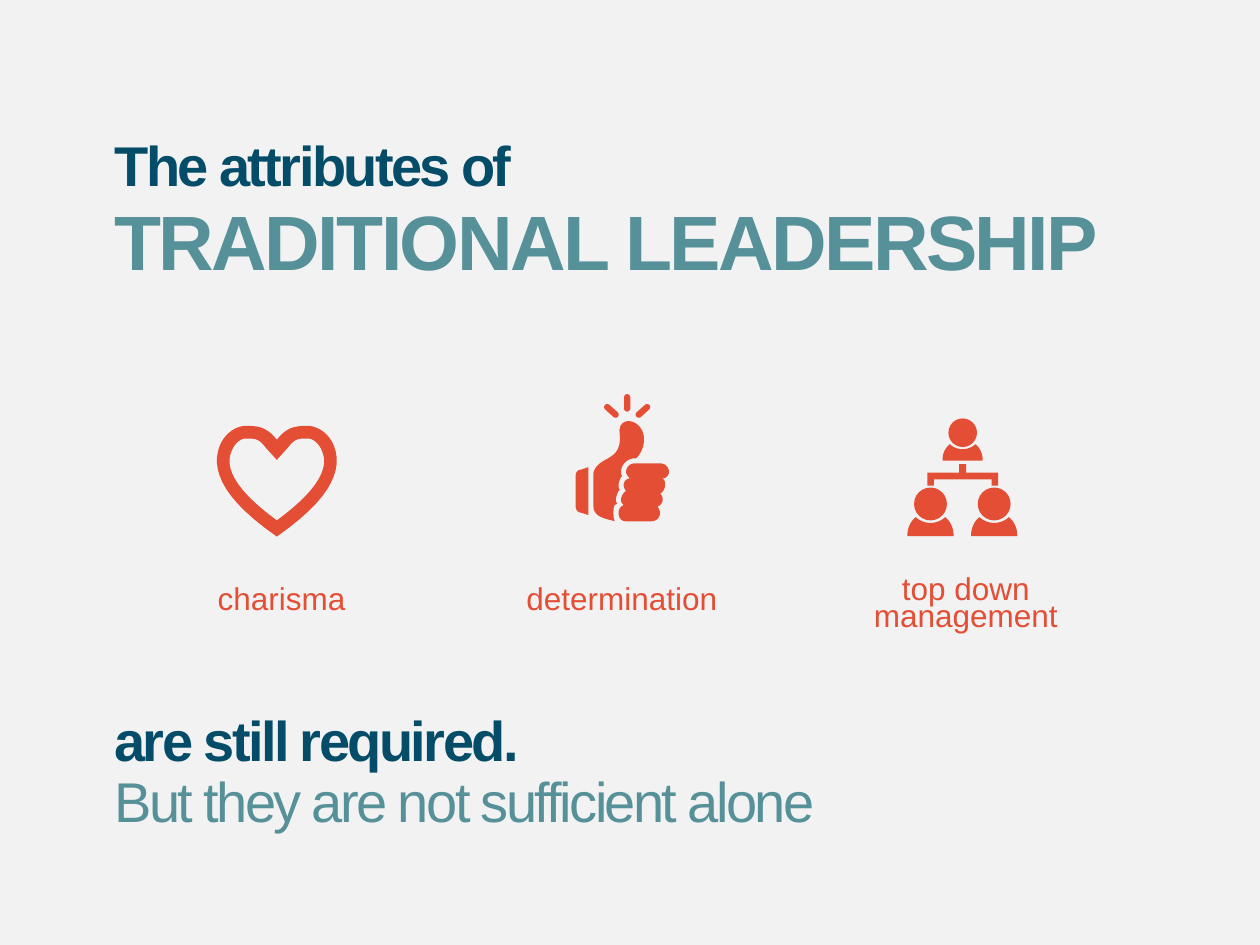
"""Build the slide on the attributes of traditional leadership."""
from pptx import Presentation
from pptx.dml.color import RGBColor
from pptx.enum.shapes import MSO_SHAPE
from pptx.enum.text import MSO_ANCHOR, MSO_AUTO_SIZE, PP_ALIGN
from pptx.util import Pt

OVAL = MSO_SHAPE.OVAL
ROUNDED = MSO_SHAPE.ROUNDED_RECTANGLE
LEFT, CENTER = PP_ALIGN.LEFT, PP_ALIGN.CENTER
TOP = MSO_ANCHOR.TOP
FIT_SHAPE, NO_FIT = MSO_AUTO_SIZE.SHAPE_TO_FIT_TEXT, MSO_AUTO_SIZE.NONE

COLORS = {"paper": "F2F2F2", "navy": "044C68", "teal": "569099", "red": "E34E35"}
CURVE_STEPS = 10
TITLE_ONLY_LAYOUT = 5

HEART_OUTER = [
    (0, 7.9), (4, 2.9, 7.9, 0, 15.8, 0), (18.7, 0), (25.2, 0.7, 33.1, 6.5, 34.2, 18),
    (34.2, 21.6), (33.1, 33.1, 24.5, 46.1, 0, 63.2),
]
HEART_INNER = [
    (0, 19.4), (5.8, 13), (9.4, 8.6, 10.8, 7.2, 15.8, 7.2), (18, 7.2),
    (20.9, 7.2, 25.9, 10.8, 27, 18.7), (27, 21.6), (26, 31, 16.6, 41.8, 0, 54),
]
SHOULDERS = [
    (0, 20.2), (3.2, 20.2, 6.2, 19, 8.4, 16.9), (11.3, 19.2, 13.2, 22.9, 13.2, 27.4),
    (13.2, 27.7),
]
BRACKET = [(0, 4.8), (20.2, 4.8), (20.2, 12.2), (16.5, 12.2), (16.5, 8.6), (0, 8.6)]
STEM = [(0, 0), (2, 0), (2, 6.8), (0, 6.8)]
FINGERS = [
    (53.3, 44.6), (53.3, 41.8, 51.1, 39.6, 48.2, 39.6), (33.8, 39.6),
    (31, 39.6, 28.8, 41.8, 28.8, 44.6), (28.8, 45.4, 29.5, 46.8, 31, 48.2),
    (28.8, 48.2, 27.4, 50.4, 27.4, 51.8), (27.4, 53.3, 28.1, 54.7, 28.8, 55.4),
    (27.4, 56.2, 25.9, 58.3, 25.9, 60.5), (25.9, 61.9, 26.6, 62.6, 27.4, 63.4),
    (25.9, 64.1, 24.5, 65.5, 24.5, 67.7), (24.5, 70.6, 25.9, 72.7, 28.8, 72.7),
    (43.2, 72.7), (46.1, 72.7, 48.2, 70.6, 48.2, 67.7),
    (48.2, 67, 47.5, 65.5, 46.8, 64.1), (48.2, 64.1, 49.7, 61.9, 49.7, 60.5),
    (49.7, 58.3, 49, 57.6, 48.2, 56.9), (49.7, 56.2, 51.1, 54, 51.1, 51.8),
    (51.1, 50.4, 51.1, 49.7, 49.7, 48.2), (51.8, 48.2, 53.3, 46.1, 53.3, 44.6),
]
CUFF = [
    (7.2, 69.1), (2.9, 67.7), (1.4, 67.7, 0, 66.2, 0, 64.1), (0, 46.8),
    (0, 44.6, 1.4, 43.2, 2.9, 43.2), (7.2, 41.8),
]
THUMB = [
    (21.6, 67.7), (21.6, 66.2, 21.6, 64.8, 22.3, 63.4), (23.8, 62.6),
    (23, 61.9, 23, 61.2, 23, 60.5), (23, 58.3, 23.8, 56.9, 24.5, 55.4), (25.2, 54.7),
    (24.5, 54, 24.5, 53.3, 24.5, 51.8), (24.5, 50.4, 25.2, 49, 25.9, 47.5),
    (26.6, 46.8), (25.9, 46.1, 25.9, 45.4, 25.9, 44.6),
    (25.9, 40.3, 29.5, 36.7, 33.8, 36.7), (34.6, 36.7),
    (37.4, 33.8, 39.6, 29.5, 38.9, 23.8), (37.4, 13.7, 23, 11.5, 25.2, 23.8),
    (25.9, 33.1, 20.9, 35.3, 17.3, 37.4), (10.1, 41, 10.1, 45.4, 10.1, 45.4),
    (10.1, 64.1), (10.1, 70.6, 18, 71.3, 22.3, 72.7),
    (21.6, 71.3, 21.6, 69.1, 21.6, 67.7),
]
SPARKS = [(-9, 4.6, -48), (0, 0, 0), (9, 4.6, 48)]
PEOPLE = [(531.7, 278.6, 1), (568.1, 278.6, 1), (550.1, 239.1, 0.87)]


def flatten(segments):
    """Turn line and cubic curve segments into a list of points."""
    points = [segments[0]]
    for segment in segments[1:]:
        if len(segment) == 2:
            points.append(segment)
            continue
        start, controls = points[-1], (segment[:2], segment[2:4], segment[4:])
        for step in range(1, CURVE_STEPS + 1):
            t = step / CURVE_STEPS
            weights = ((1 - t) ** 3, 3 * t * (1 - t) ** 2, 3 * t * t * (1 - t), t ** 3)
            points.append(tuple(
                sum(weight * point[axis] for weight, point in zip(weights, (start, *controls)))
                for axis in (0, 1)
            ))
    return points


def mirrored(segments):
    """Complete the right half of an outline with its left half."""
    half = flatten(segments)
    return half + [(-x, y) for x, y in reversed(half)]


class Slide:
    """Hold the style and the current page, and add each kind of element."""

    def __init__(self, deck):
        self.font = "Arial"
        self.page = deck.slides.add_slide(deck.slide_layouts[TITLE_ONLY_LAYOUT])
        self.paint(self.page.background.fill, "paper")

    def paint(self, fill, color):
        """Fill with one named colour."""
        fill.solid()
        fill.fore_color.rgb = RGBColor.from_string(COLORS[color])

    def set_text(self, box, text, size, color, bold=False, align=LEFT, leading=1.0,
                 tracking=0, wrap=False, fit=FIT_SHAPE):
        """Set and format the text of a box."""
        frame = box.text_frame
        frame.text = text
        frame.word_wrap = wrap
        frame.auto_size = fit
        frame.vertical_anchor = TOP
        para = frame.paragraphs[0]
        para.alignment, para.line_spacing = align, leading
        for span in para.runs:
            span.font.name, span.font.size, span.font.bold = self.font, Pt(size), bold
            span.font.color.rgb = RGBColor.from_string(COLORS[color])
            if tracking:
                span._r.get_or_add_rPr().set("spc", str(round(tracking * 100)))

    def title(self, text, left, top, width, height, **style):
        """Place and format the title."""
        box = self.page.shapes.title
        box.left, box.top, box.width, box.height = map(Pt, (left, top, width, height))
        self.set_text(box, text, wrap=True, fit=NO_FIT, **style)

    def text(self, text, left, top, width, height, **style):
        """Add a text box."""
        box = self.page.shapes.add_textbox(*map(Pt, (left, top, width, height)))
        self.set_text(box, text, **style)

    def group(self):
        """Add an empty group and return its shapes."""
        return self.page.shapes.add_group_shape().shapes

    def finish(self, shape):
        """Give an icon part its flat red look."""
        shape.shadow.inherit = False
        self.paint(shape.fill, "red")
        shape.line.fill.background()

    def outline(self, shapes, left, top, *contours, scale=1):
        """Add a freeform of one or more closed contours."""
        placed = [[(Pt(left + x * scale), Pt(top + y * scale)) for x, y in contour]
                  for contour in contours]
        builder = shapes.build_freeform(*placed[0][0])
        builder.add_line_segments(placed[0][1:], close=True)
        for contour in placed[1:]:
            builder.move_to(*contour[0])
            builder.add_line_segments(contour[1:], close=True)
        self.finish(builder.convert_to_shape())

    def preset(self, shapes, kind, middle, top, width, height, rotation=0):
        """Add a preset shape centred on a vertical axis."""
        shape = shapes.add_shape(kind, *map(Pt, (middle - width / 2, top, width, height)))
        shape.rotation = rotation
        if kind == ROUNDED:
            shape.adjustments[0] = 0.5
        self.finish(shape)

    def person(self, shapes, middle, top, scale):
        """Add a head and shoulders."""
        size = 18.8 * scale
        self.preset(shapes, OVAL, middle, top, size, size)
        self.outline(shapes, middle, top, mirrored(SHOULDERS), scale=scale)


def main():
    """Build and save the deck."""
    deck = Presentation()
    deck.slide_width, deck.slide_height = Pt(720), Pt(540)
    slide = Slide(deck)

    heading = dict(size=32, color="navy", bold=True, leading=0.85, tracking=-1.5)
    label = dict(size=18, color="red", align=CENTER)
    slide.title("The attributes of", 58.3, 77, 652.3, 40.3, **heading)
    slide.text("charisma", 116.6, 327.6, 88.6, 28.8, **label)
    slide.text("determination", 293, 327.6, 124.6, 28.8, **label)
    slide.text("top down\vmanagement", 491.8, 327.6, 120.2, 38.2, leading=0.7, **label)
    slide.text("are still required.", 58.3, 405.4, 267.1, 40.3, wrap=True, **heading)
    slide.text("TRADITIONAL LEADERSHIP", 58.3, 107.3, 580.3, 60.5,
               size=44, color="teal", bold=True, tracking=-1.5)
    slide.text("But they are not sufficient alone", 58.3, 434.2, 416.2, 46.1,
               size=32, color="teal", tracking=-1.5)

    chart = slide.group()
    for middle, top, scale in PEOPLE:
        slide.person(chart, middle, top, scale)
    for part in (BRACKET, STEM):
        slide.outline(chart, 550.1, 265.3, mirrored(part))

    hand = slide.group()
    for part in (FINGERS, CUFF, THUMB):
        slide.outline(hand, 329, 225.2, flatten(part))
    for across, down, rotation in SPARKS:
        slide.preset(hand, ROUNDED, 358.4 + across, 225.2 + down, 3.6, 10, rotation)

    slide.outline(slide.page.shapes, 158.2, 243.4, mirrored(HEART_OUTER), mirrored(HEART_INNER))
    deck.save("out.pptx")


if __name__ == "__main__":
    main()
